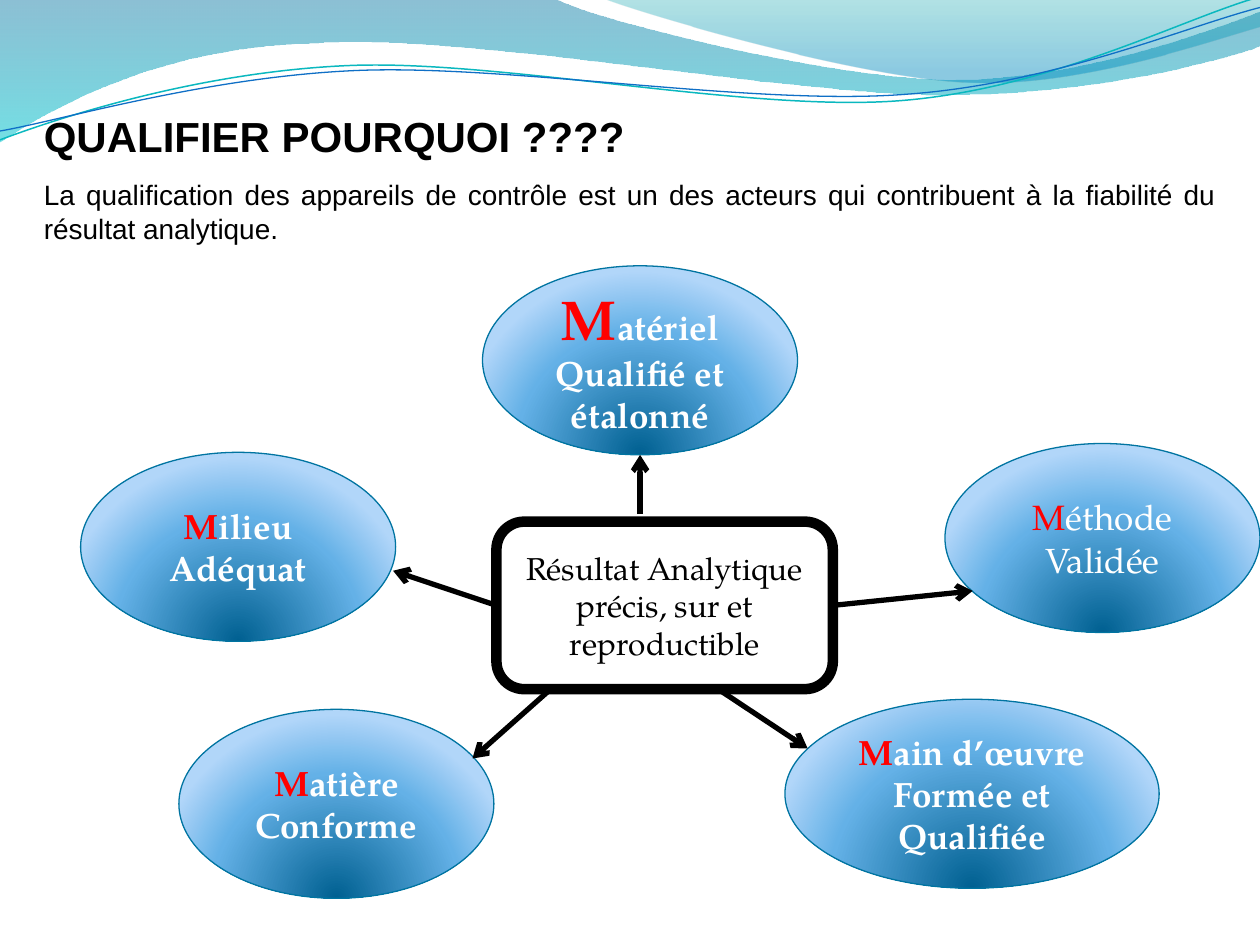
import math

import pptx
import pptx.dml.color
import pptx.enum.shapes
import pptx.enum.text
import pptx.oxml
import pptx.oxml.ns
import pptx.util

Inches = pptx.util.Inches
Pt = pptx.util.Pt
ALIGN = pptx.enum.text.PP_ALIGN
ANCHOR = pptx.enum.text.MSO_ANCHOR
SHAPE = pptx.enum.shapes.MSO_SHAPE
NAMESPACE = pptx.oxml.ns.nsdecls("a")
SERIF = "TeX Gyre Pagella"
WAVE_ROTATION = 357.3
LINEAR = '<a:lin ang="5400000" scaled="0"/>'
RADIAL = ('<a:path path="circle"><a:fillToRect l="50000" t="130000" '
          'r="50000" b="-30000"/></a:path>')
BUBBLE_STOPS = [(0, "006091", 100), (68, "64B1E7", 100), (100, "B1D6F9", 100)]

BANDS = [
    ([[(0, 0)], [(4.4, -0.01)],
      [(4.76, 0.17), (6.64, 0.63), (7.58, 0.63)],
      [(8.53, 0.63), (9.58, 0.26), (10, 0.09)], [(10.01, 0.36)],
      [(9.83, 0.44), (8.7, 0.76), (7.46, 0.75)],
      [(6.22, 0.75), (3.82, 0.28), (2.57, 0.34)],
      [(1.29, 0.36), (0.46, 0.83), (-0.01, 1.13)], [(0, 0)]],
     [(0, "0074A1", 45), (100, "00C6CF", 55)]),
    ([[(4.79, -0.01)],
      [(5.09, 0.11), (6.82, 0.62), (7.69, 0.65)],
      [(8.56, 0.69), (9.61, 0.32), (10, 0.21)], [(10, 0)], [(4.79, -0.01)]],
     [(0, "00A1A9", 30), (80, "008BBF", 45)]),
]
WAVES = [
    ([[(0, 1.11)], [(0.48, 0.93), (1.58, 0.57), (2.77, 0.52)],
      [(3.95, 0.47), (5.93, 0.89), (7.13, 0.8)],
      [(8.33, 0.71), (9.38, 0.15), (9.98, -0.02)]], (4.99, 0.58), "0AB8BF", 0.85),
    ([[(0, 1.04)], [(0.47, 0.96), (1.64, 0.61), (2.83, 0.56)],
      [(4.03, 0.51), (5.97, 0.84), (7.17, 0.75)],
      [(8.36, 0.67), (9.41, 0.21), (10, 0.06)]], (5, 0.59), "0F6FC6", 0.75),
]
BUBBLES = [
    (3.83, 2.11, 2.5, "atériel Qualifié et étalonné", 32, True),
    (7.5, 3.52, 2.5, "éthode Validée", 20, False),
    (0.64, 3.59, 2.5, "ilieu Adéquat", 20, True),
    (1.42, 5.63, 2.5, "atière Conforme", 20, True),
    (6.23, 5.55, 2.97, "ain d’œuvre Formée et Qualifiée", 20, True),
]
ARROWS = [
    ((3.94, 4.8), (3.12, 4.53), 1),
    ((6.61, 4.8), (7.72, 4.69), 3),
    ((5.7, 5.47), (6.41, 5.94), None),
    ((4.37, 5.47), (3.75, 6.02), None),
    ((5.08, 4.08), (5.08, 3.61), None),
]


def color(value):
    return pptx.dml.color.RGBColor.from_string(value)


def apply_format(target, values):
    for name, value in values.items():
        setattr(target, name, value)


def set_line(shape, value, width):
    shape.line.color.rgb = color(value)
    shape.line.width = Pt(width)


def set_gradient(shape, stops, direction):
    shape.fill.solid()
    properties = shape._element.spPr
    solid = properties.find(pptx.oxml.ns.qn("a:solidFill"))
    stop_xml = "".join(
        f'<a:gs pos="{position * 1000}"><a:srgbClr val="{value}">'
        f'<a:alpha val="{opacity * 1000}"/></a:srgbClr></a:gs>'
        for position, value, opacity in stops)
    properties.replace(solid, pptx.oxml.parse_xml(
        f'<a:gradFill {NAMESPACE} rotWithShape="1"><a:gsLst>{stop_xml}</a:gsLst>'
        f'{direction}</a:gradFill>'))


def add_run(paragraph, text, size, value, font=SERIF, bold=False):
    run = paragraph.add_run()
    run.text = text
    apply_format(run.font, {"size": Pt(size), "name": font, "bold": bold})
    run.font.color.rgb = color(value)


def turn_back(point, center):
    angle = math.radians(360 - WAVE_ROTATION)
    x, y = point[0] - center[0], point[1] - center[1]
    return (center[0] + x * math.cos(angle) - y * math.sin(angle),
            center[1] + x * math.sin(angle) + y * math.cos(angle))


def add_curve(slide, segments, closed):
    points = [(Inches(x), Inches(y)) for segment in segments for x, y in segment]
    builder = slide.shapes.build_freeform(*points[0])
    builder.add_line_segments(points[1:], close=closed)
    shape = builder.convert_to_shape()
    shape.shadow.inherit = False
    lines = list(shape._element.spPr.iter(pptx.oxml.ns.qn("a:lnTo")))
    for segment in segments[1:]:
        group, lines = lines[:len(segment)], lines[len(segment):]
        if len(segment) == 3:
            bezier = pptx.oxml.parse_xml(f"<a:cubicBezTo {NAMESPACE}/>")
            group[0].addprevious(bezier)
            for line in group:
                bezier.append(line[0])
                line.getparent().remove(line)
    return shape


def add_heading(slide):
    box = slide.shapes.add_textbox(Inches(0.25), Inches(0.83), Inches(9.5), Inches(1.2))
    frame = box.text_frame
    frame.word_wrap = True
    title = frame.paragraphs[0]
    title.space_after = Pt(9.5)
    add_run(title, "QUALIFIER POURQUOI\u00a0????", 24, "000000", "Arial", True)
    body = frame.add_paragraph()
    body.alignment = ALIGN.JUSTIFY
    add_run(body, "La qualification des appareils de contrôle est un des acteurs qui "
            "contribuent à la fiabilité du résultat analytique.", 16, "000000", "Arial")


def add_node(slide, kind, left, top, width, height):
    shape = slide.shapes.add_shape(
        kind, Inches(left), Inches(top), Inches(width), Inches(height))
    shape.shadow.inherit = False
    apply_format(shape.text_frame, {"word_wrap": True, "vertical_anchor": ANCHOR.MIDDLE})
    paragraph = shape.text_frame.paragraphs[0]
    paragraph.alignment = ALIGN.CENTER
    return shape, paragraph


def add_result(slide):
    shape, paragraph = add_node(slide, SHAPE.ROUNDED_RECTANGLE, 3.94, 4.14, 2.67, 1.33)
    shape.fill.solid()
    shape.fill.fore_color.rgb = color("FFFFFF")
    set_line(shape, "000000", 6)
    add_run(paragraph, "Résultat Analytique précis, sur et reproductible", 18, "000000")
    return shape


def add_bubble(slide, left, top, width, text, initial_size, bold):
    shape, paragraph = add_node(slide, SHAPE.OVAL, left, top, width, 1.5)
    set_gradient(shape, BUBBLE_STOPS, RADIAL)
    set_line(shape, "0074A1", 0.75)
    add_run(paragraph, "M", initial_size, "FF0000", bold=bold)
    add_run(paragraph, text, 20, "FFFFFF", bold=bold)


def add_arrow(slide, start, end, result, side):
    connector = slide.shapes.add_connector(
        pptx.enum.shapes.MSO_CONNECTOR.STRAIGHT,
        *(Inches(value) for value in (*start, *end)))
    if side is not None:
        connector.begin_connect(result, side)
    set_line(connector, "000000", 3)
    properties = connector._element.spPr
    line = properties.find(pptx.oxml.ns.qn("a:ln"))
    line.append(pptx.oxml.parse_xml(f'<a:tailEnd {NAMESPACE} type="arrow"/>'))
    properties.append(pptx.oxml.parse_xml(f"<a:effectLst {NAMESPACE}/>"))


def main():
    presentation = pptx.Presentation()
    apply_format(presentation, {"slide_width": Inches(10), "slide_height": Inches(7.5)})
    slide = presentation.slides.add_slide(presentation.slide_layouts[6])
    for segments, stops in BANDS:
        band = add_curve(slide, segments, True)
        set_gradient(band, stops, LINEAR)
        band.line.fill.background()
    for segments, center, value, width in WAVES:
        level = [[turn_back(point, center) for point in segment] for segment in segments]
        wave = add_curve(slide, level, False)
        wave.rotation = WAVE_ROTATION
        wave.fill.background()
        set_line(wave, value, width)
    add_heading(slide)
    result = add_result(slide)
    for bubble in BUBBLES:
        add_bubble(slide, *bubble)
    for start, end, side in ARROWS:
        add_arrow(slide, start, end, result, side)
    presentation.save("out.pptx")


if __name__ == "__main__":
    main()
